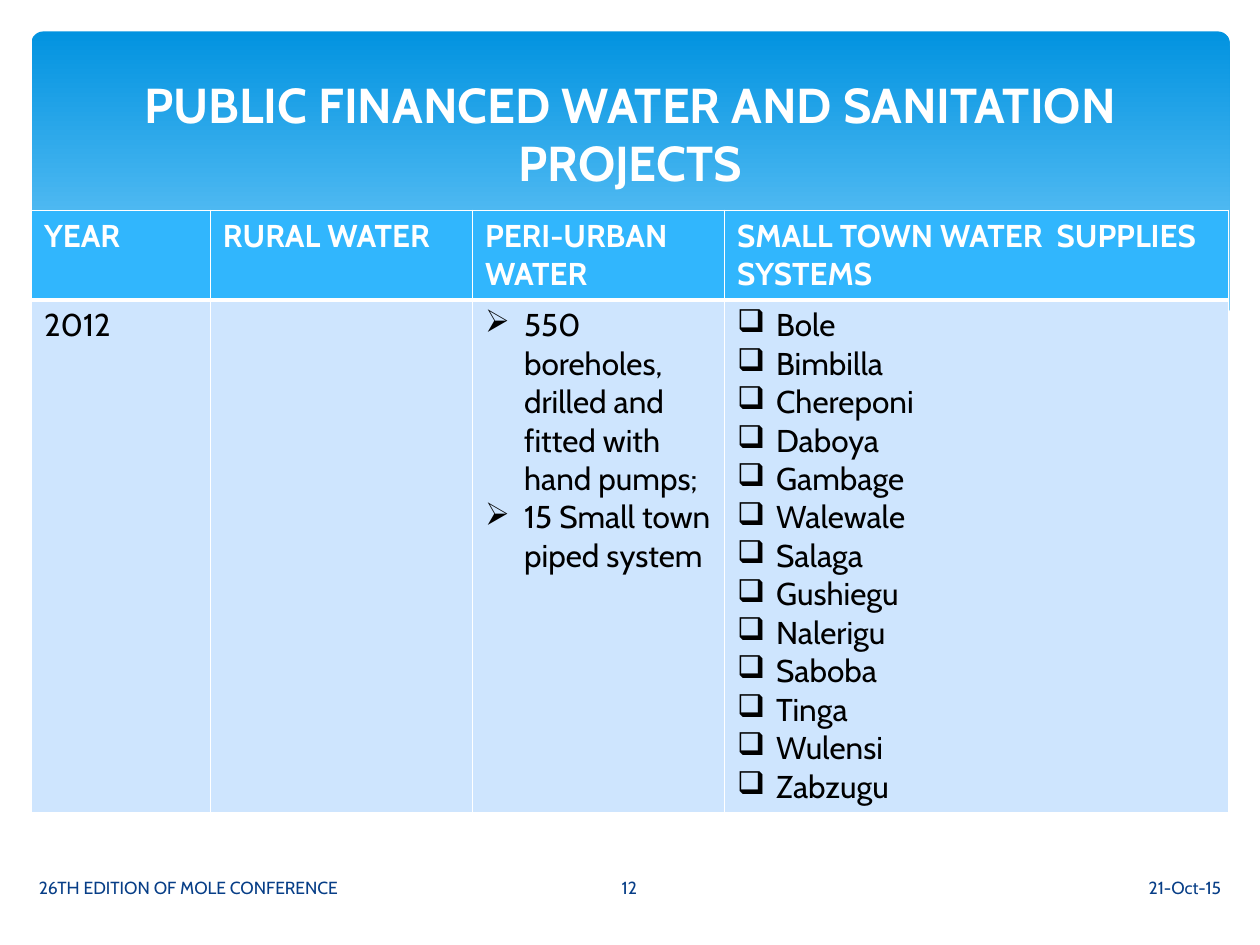
from dataclasses import dataclass

import lxml.etree
import pptx
import pptx.dml.color
import pptx.enum.shapes
import pptx.enum.text
import pptx.oxml.ns
import pptx.util

Inches = pptx.util.Inches
Align = pptx.enum.text.PP_ALIGN


@dataclass(frozen=True)
class Theme:
    font: str = "Cabin"
    title_size: float = 28
    table_size: float = 18
    footer_size: float = 10
    white: str = "FFFFFF"
    black: str = "000000"
    navy: str = "073E87"
    banner_top: str = "0293E0"
    banner_bottom: str = "83D3FE"
    header_fill: str = "31B6FD"
    body_fill: str = "CEE5FE"
    thin_rule: float = 1
    thick_rule: float = 3


@dataclass(frozen=True)
class Label:
    text: str
    left: float
    top: float
    width: float
    height: float
    align: Align
    size: float
    color: str
    bold: bool = False


@dataclass(frozen=True)
class Column:
    heading: str
    width: float
    entries: tuple[str, ...] = ()
    bullet: str = ""


THEME = Theme()
BULLET_INDENT = 0.31
FOOTER = {"top": 6.84, "height": 0.4, "size": THEME.footer_size, "color": THEME.navy}

LABELS = (
    Label("21-Oct-15", left=5.65, width=4.14, align=Align.RIGHT, **FOOTER),
    Label("26TH EDITION OF MOLE CONFERENCE", left=0.21, width=4.14, align=Align.LEFT, **FOOTER),
    Label("12", left=4.36, width=1.27, align=Align.CENTER, **FOOTER),
    Label("PUBLIC FINANCED WATER AND SANITATION PROJECTS", 0.5, 0.37, 9, 1.37,
          Align.CENTER, THEME.title_size, THEME.white, True),
)

COLUMNS = (
    Column("YEAR", 1.42, ("2012",)),
    Column("RURAL WATER", 2.08),
    Column("PERI-URBAN WATER", 2,
           ("550 boreholes, drilled and fitted with hand pumps;",
            "15 Small town piped system"), "➢"),
    Column("SMALL TOWN WATER  SUPPLIES SYSTEMS", 4,
           ("Bole", "Bimbilla", "Chereponi", "Daboya", "Gambage", "Walewale", "Salaga",
            "Gushiegu", "Nalerigu", "Saboba", "Tinga", "Wulensi", "Zabzugu"), "❑"),
)

WAVE = (
    (9.77, 2.46), (9.5, 2.56), (9.2, 2.65), (8.87, 2.71), (8.5, 2.75), (8.09, 2.77),
    (7.61, 2.75), (7.08, 2.7), (6.48, 2.62), (5.79, 2.5), (5.03, 2.33), (4.47, 2.2),
    (3.91, 2.07), (3.4, 1.97), (2.92, 1.9), (2.5, 1.86), (2.11, 1.84), (1.77, 1.84),
    (1.46, 1.85), (1.19, 1.87), (0.95, 1.91), (0.67, 1.97), (0.46, 2.03), (0.23, 2.13),
    (0.23, 3.29), (9.77, 3.29),
)


def rgb(color: str) -> pptx.dml.color.RGBColor:
    return pptx.dml.color.RGBColor.from_string(color)


def style_font(paragraph, size: float, color: str, bold: bool) -> None:
    font = paragraph.font
    font.name, font.size, font.bold = THEME.font, pptx.util.Pt(size), bold
    font.color.rgb = rgb(color)


def add_bullet(paragraph, symbol: str) -> None:
    """Give the paragraph a bullet with a hanging indent."""
    properties = paragraph._p.get_or_add_pPr()
    indent = Inches(BULLET_INDENT)
    properties.set("marL", str(indent))
    properties.set("indent", str(-indent))
    lxml.etree.SubElement(properties, pptx.oxml.ns.qn("a:buChar"), char=symbol)


def add_borders(cell, top: float, bottom: float) -> None:
    """Draw white rules on all sides; call before the cell gets its fill."""
    qn = pptx.oxml.ns.qn
    properties = cell._tc.get_or_add_tcPr()
    widths = {"L": THEME.thin_rule, "R": THEME.thin_rule, "T": top, "B": bottom}
    for side, width in widths.items():
        rule = lxml.etree.SubElement(properties, qn(f"a:ln{side}"), w=str(pptx.util.Pt(width)))
        fill = lxml.etree.SubElement(rule, qn("a:solidFill"))
        lxml.etree.SubElement(fill, qn("a:srgbClr"), val=THEME.white)


def fill_cell(cell, lines: tuple[str, ...], bullet: str, is_header: bool) -> None:
    if is_header:
        add_borders(cell, THEME.thin_rule, THEME.thick_rule)
    else:
        add_borders(cell, THEME.thick_rule, THEME.thin_rule)
    cell.fill.solid()
    cell.fill.fore_color.rgb = rgb(THEME.header_fill if is_header else THEME.body_fill)
    cell.text_frame.text = "\n".join(lines)
    for paragraph in cell.text_frame.paragraphs:
        if bullet:
            add_bullet(paragraph, bullet)
        style_font(paragraph, THEME.table_size,
                   THEME.white if is_header else THEME.black, is_header)


def add_banner(slide) -> None:
    """Draw the gradient banner and the white wave that ends it."""
    banner = slide.shapes.add_shape(
        pptx.enum.shapes.MSO_SHAPE.ROUNDED_RECTANGLE,
        Inches(0.25), Inches(0.25), Inches(9.51), Inches(2.7))
    banner.adjustments[0] = 0.034
    banner.fill.gradient()
    banner.fill.gradient_angle = 270
    stops = ((0, THEME.banner_top), (0.9, THEME.banner_bottom))
    for stop, (position, color) in zip(banner.fill.gradient_stops, stops):
        stop.position = position
        stop.color.rgb = rgb(color)

    start, *rest = [(Inches(x), Inches(y)) for x, y in WAVE]
    outline = slide.shapes.build_freeform(*start)
    outline.add_line_segments(rest, close=True)
    wave = outline.convert_to_shape()
    wave.fill.solid()
    wave.fill.fore_color.rgb = rgb(THEME.white)

    for shape in (banner, wave):
        shape.line.fill.background()
        shape.shadow.inherit = False


def add_projects(slide) -> None:
    width = sum(column.width for column in COLUMNS)
    table = slide.shapes.add_table(
        2, len(COLUMNS), Inches(0.25), Inches(1.67), Inches(width), Inches(4.7)).table
    table.rows[0].height, table.rows[1].height = Inches(0.7), Inches(4)
    for index, column in enumerate(COLUMNS):
        table.columns[index].width = Inches(column.width)
        fill_cell(table.cell(0, index), (column.heading,), "", True)
        fill_cell(table.cell(1, index), column.entries, column.bullet, False)


def add_label(slide, label: Label) -> None:
    box = slide.shapes.add_textbox(Inches(label.left), Inches(label.top),
                                   Inches(label.width), Inches(label.height))
    frame = box.text_frame
    frame.word_wrap = True
    frame.vertical_anchor = pptx.enum.text.MSO_ANCHOR.MIDDLE
    frame.text = label.text
    paragraph = frame.paragraphs[0]
    paragraph.alignment = label.align
    style_font(paragraph, label.size, label.color, label.bold)


def main() -> None:
    deck = pptx.Presentation()
    deck.slide_width, deck.slide_height = Inches(10), Inches(7.5)
    slide = deck.slides.add_slide(deck.slide_layouts[6])
    add_banner(slide)
    add_projects(slide)
    for label in LABELS:
        add_label(slide, label)
    deck.save("out.pptx")


if __name__ == "__main__":
    main()
